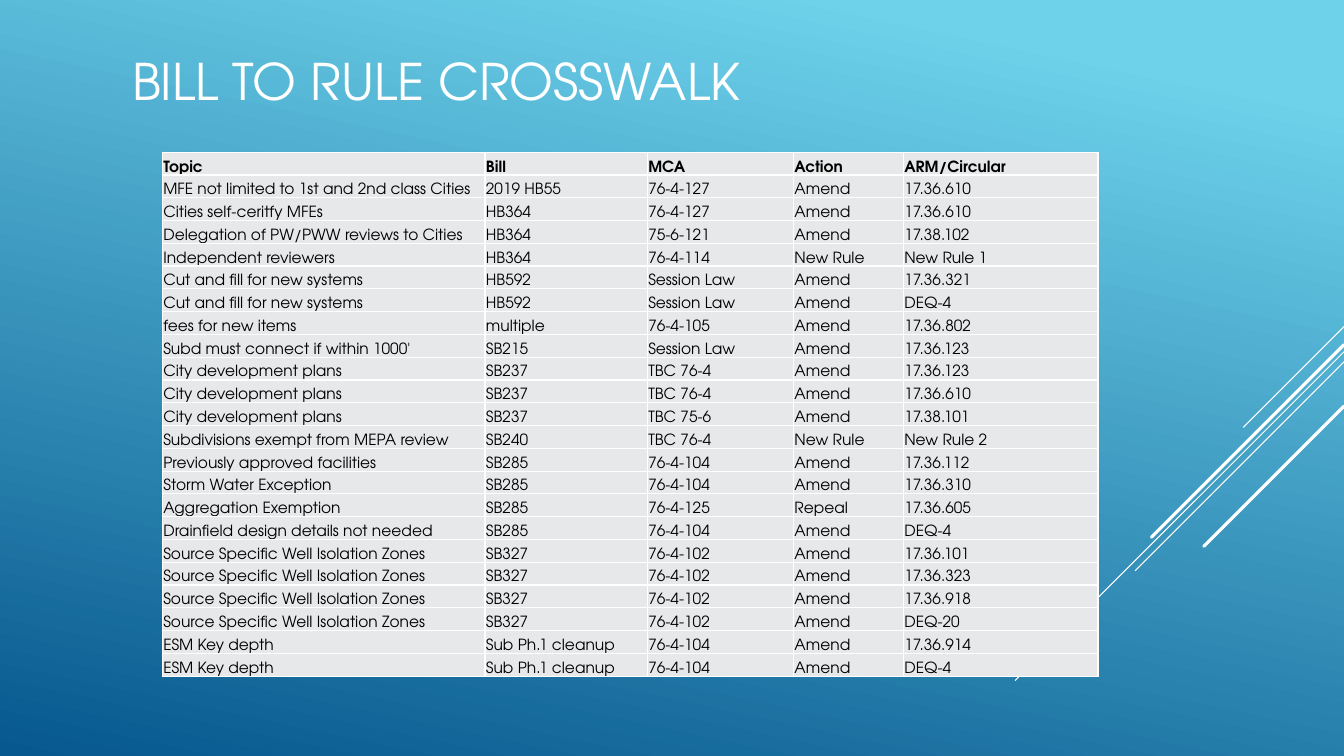
from lxml.etree import SubElement
from pptx import Presentation
from pptx.dml.color import RGBColor
from pptx.enum.shapes import MSO_CONNECTOR
from pptx.enum.text import MSO_ANCHOR, MSO_AUTO_SIZE, PP_ALIGN
from pptx.oxml.ns import qn
from pptx.util import Inches, Pt

FONT = "TeX Gyre Adventor"
WHITE, BLACK, CELL_GREY = "FFFFFF", "000000", "E7E8EA"
SLIDE_WIDTH, SLIDE_HEIGHT = 13.33, 7.5

TITLE_BOX = (1.21, -0.03, 9.33, 1.65)
TABLE_BOX = (1.61, 1.51, 9.27, 5.2)
COLUMN_WIDTHS = (3.2, 1.61, 1.45, 1.09, 1.93)

# Height at the right edge, horizontal reach, weight in points
STREAKS = (
    (3.24, 1.0, 0.75),
    (3.49, 3.26, 0.75),
    (3.59, 2.07, 0.75),
    (3.42, 1.91, 2.25),
    (4.03, 1.39, 2.25),
)

CROSSWALK = (
    ("Topic", "Bill", "MCA", "Action", "ARM/Circular"),
    ("MFE not limited to 1st and 2nd class Cities", "2019 HB55", "76-4-127", "Amend", "17.36.610"),
    ("Cities self-ceritfy MFEs", "HB364", "76-4-127", "Amend", "17.36.610"),
    ("Delegation of PW/PWW reviews to Cities", "HB364", "75-6-121", "Amend", "17.38.102"),
    ("Independent reviewers", "HB364", "76-4-114", "New Rule", "New Rule 1"),
    ("Cut and fill for new systems", "HB592", "Session Law", "Amend", "17.36.321"),
    ("Cut and fill for new systems", "HB592", "Session Law", "Amend", "DEQ-4"),
    ("fees for new items", "multiple", "76-4-105", "Amend", "17.36.802"),
    ("Subd must connect if within 1000'", "SB215", "Session Law", "Amend", "17.36.123"),
    ("City development plans", "SB237", "TBC 76-4", "Amend", "17.36.123"),
    ("City development plans", "SB237", "TBC 76-4", "Amend", "17.36.610"),
    ("City development plans", "SB237", "TBC 75-6", "Amend", "17.38.101"),
    ("Subdivisions exempt from MEPA review", "SB240", "TBC 76-4", "New Rule", "New Rule 2"),
    ("Previously approved facilities", "SB285", "76-4-104", "Amend", "17.36.112"),
    ("Storm Water Exception", "SB285", "76-4-104", "Amend", "17.36.310"),
    ("Aggregation Exemption", "SB285", "76-4-125", "Repeal", "17.36.605"),
    ("Drainfield design details not needed", "SB285", "76-4-104", "Amend", "DEQ-4"),
    ("Source Specific Well Isolation Zones", "SB327", "76-4-102", "Amend", "17.36.101"),
    ("Source Specific Well Isolation Zones", "SB327", "76-4-102", "Amend", "17.36.323"),
    ("Source Specific Well Isolation Zones", "SB327", "76-4-102", "Amend", "17.36.918"),
    ("Source Specific Well Isolation Zones", "SB327", "76-4-102", "Amend", "DEQ-20"),
    ("ESM Key depth", "Sub Ph.1 cleanup", "76-4-104", "Amend", "17.36.914"),
    ("ESM Key depth", "Sub Ph.1 cleanup", "76-4-104", "Amend", "DEQ-4"),
)


def rgb(hex_colour):
    return RGBColor.from_string(hex_colour)


def write_text(frame, text, size, colour, bold=False):
    paragraph = frame.paragraphs[0]
    paragraph.alignment = PP_ALIGN.LEFT
    run = paragraph.add_run()
    run.text = text
    font = run.font
    font.name, font.size, font.bold = FONT, Pt(size), bold
    font.color.rgb = rgb(colour)


def paint_background(slide):
    fill = slide.background.fill
    fill.gradient()
    fill.gradient_angle = 258
    for stop, (position, colour) in zip(fill.gradient_stops, ((0.1, "6ED2EB"), (1, "06588E"))):
        stop.position = position
        stop.color.rgb = rgb(colour)


def add_streaks(slide, right):
    """Draw the 45-degree lines that run down and left from the right edge."""
    for top, reach, weight in STREAKS:
        streak = slide.shapes.add_connector(
            MSO_CONNECTOR.STRAIGHT,
            Inches(right), Inches(top), Inches(right - reach), Inches(top + reach),
        )
        streak.line.color.rgb = rgb(WHITE)
        streak.line.width = Pt(weight)
        properties = streak.element.spPr
        properties.find(qn("a:ln")).set("cap", "rnd")
        SubElement(properties, qn("a:effectLst"))


def add_title(slide, box, text):
    title = slide.shapes.title
    title.left, title.top, title.width, title.height = map(Inches, box)
    frame = title.text_frame
    frame.auto_size = MSO_AUTO_SIZE.NONE
    frame.word_wrap = True
    frame.vertical_anchor = MSO_ANCHOR.MIDDLE
    write_text(frame, text, size=36, colour=WHITE)


def set_borders(cell, colour, weight):
    properties = cell._tc.get_or_add_tcPr()
    for side in ("lnL", "lnR", "lnT", "lnB"):
        border = SubElement(properties, qn(f"a:{side}"), w=str(Pt(weight)))
        SubElement(SubElement(border, qn("a:solidFill")), qn("a:srgbClr"), val=colour)


def format_cell(cell):
    cell.margin_left = cell.margin_right = cell.margin_top = Inches(0.01)
    cell.margin_bottom = 0
    cell.vertical_anchor = MSO_ANCHOR.BOTTOM
    set_borders(cell, WHITE, 1)
    cell.fill.solid()
    cell.fill.fore_color.rgb = rgb(CELL_GREY)


def add_crosswalk(slide, box):
    table = slide.shapes.add_table(len(CROSSWALK), len(COLUMN_WIDTHS), *map(Inches, box)).table
    table.horz_banding = False
    for column, width in zip(table.columns, COLUMN_WIDTHS):
        column.width = Inches(width)
    for index, (row, entries) in enumerate(zip(table.rows, CROSSWALK)):
        row.height = Inches(box[3] / len(CROSSWALK))
        for cell, entry in zip(row.cells, entries):
            format_cell(cell)
            write_text(cell.text_frame, entry, size=11, colour=BLACK, bold=index == 0)


def main():
    deck = Presentation()
    deck.slide_width, deck.slide_height = Inches(SLIDE_WIDTH), Inches(SLIDE_HEIGHT)
    slide = deck.slides.add_slide(deck.slide_layouts.get_by_name("Title Only"))
    paint_background(slide)
    add_streaks(slide, SLIDE_WIDTH)
    add_title(slide, TITLE_BOX, "BILL TO RULE CROSSWALK")
    add_crosswalk(slide, TABLE_BOX)
    deck.save("out.pptx")


if __name__ == "__main__":
    main()
